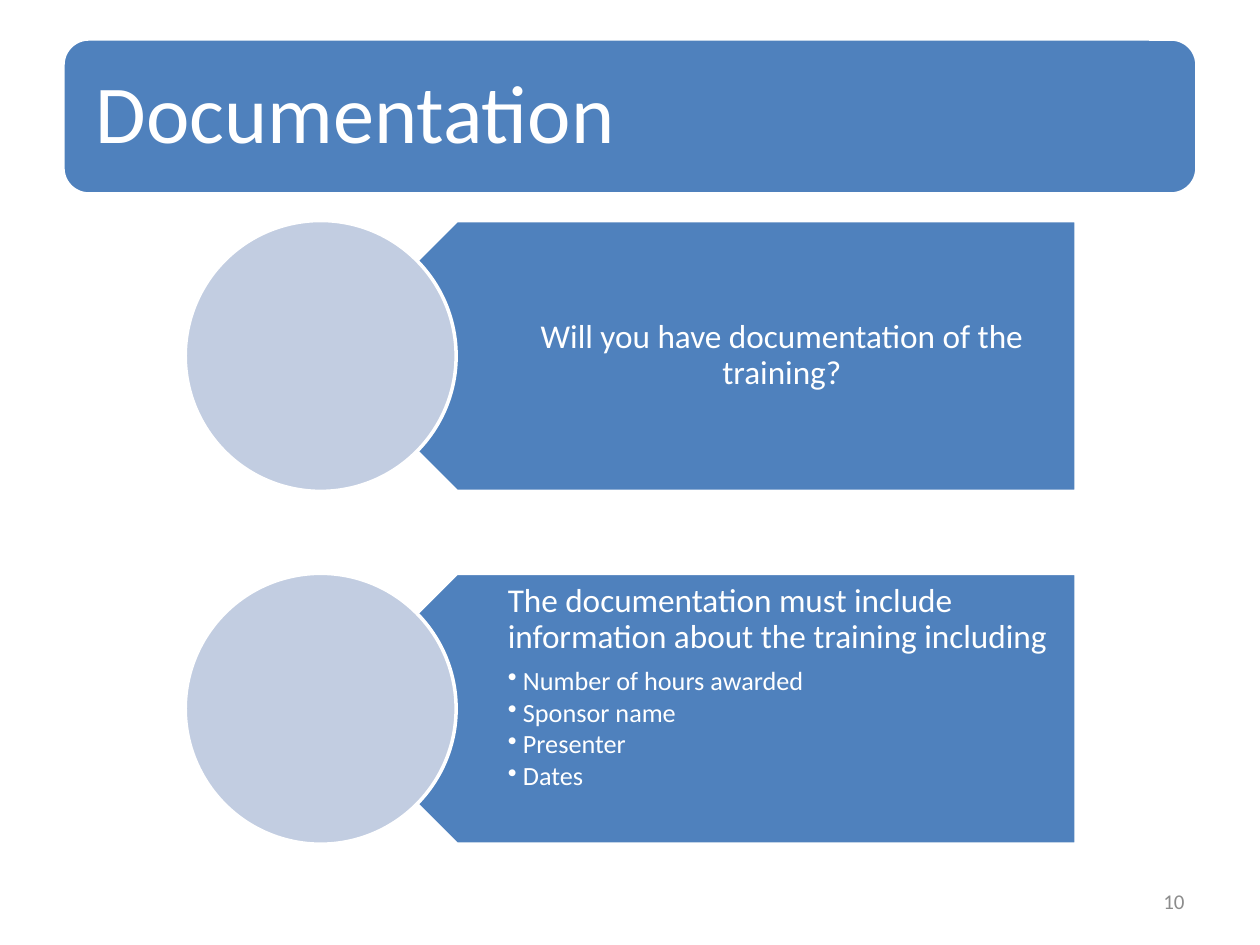
from dataclasses import dataclass

from lxml import etree
from pptx import Presentation
from pptx.dml.color import RGBColor
from pptx.enum import shapes, text
from pptx.oxml.ns import qn
from pptx.util import Inches, Pt

SHAPE = shapes.MSO_SHAPE
ALIGN = text.PP_ALIGN
ANCHOR = text.MSO_ANCHOR


@dataclass(frozen=True)
class Theme:
    font: str = "Calibri"
    accent: str = "4F81BD"
    pale: str = "C2CDE1"
    white: str = "FFFFFF"
    grey: str = "8C8C8C"
    title: int = 47
    body: int = 19
    bullet: int = 15
    number: int = 12
    outline: int = 2


@dataclass(frozen=True)
class Box:
    left: float
    top: float
    width: float
    height: float

    def emu(self) -> list[int]:
        return [Inches(v) for v in (self.left, self.top, self.width, self.height)]


@dataclass(frozen=True)
class Para:
    text: str
    size: int
    align: ALIGN = ALIGN.LEFT
    after: float = 0
    bullet: bool = False
    color: str = Theme.white
    spacing: float = 0.9


@dataclass(frozen=True)
class Topic:
    paras: list[Para]
    anchor: ANCHOR


THEME = Theme()
TOP, PITCH, SIZE = 1.75, 2.8, 2.15
INDENT = 0.12
BULLETS = ["Number of hours awarded", "Sponsor name", "Presenter", "Dates"]
TOPICS = [
    Topic([Para("Will you have documentation of the training?",
                THEME.body, ALIGN.CENTER)], ANCHOR.MIDDLE),
    Topic([Para("The documentation must include information about the training including",
                THEME.body, after=7)]
          + [Para(b, THEME.bullet, after=2, bullet=True) for b in BULLETS], ANCHOR.TOP),
]


def add_block(s, kind: SHAPE, box: Box, fill: str, rotation: float = 0):
    sp = s.shapes.add_shape(kind, *box.emu())
    sp.shadow.inherit = False
    sp.rotation = rotation
    sp.fill.solid()
    sp.fill.fore_color.rgb = RGBColor.from_string(fill)
    sp.line.color.rgb = RGBColor.from_string(THEME.white)
    sp.line.width = Pt(THEME.outline)
    return sp


def add_bullet(p) -> None:
    p.level = 1
    pPr = p._p.get_or_add_pPr()
    pPr.set("marL", str(Inches(INDENT)))
    pPr.set("indent", str(Inches(-INDENT)))
    etree.SubElement(pPr, qn("a:buChar")).set("char", "•")


def add_text(s, box: Box, paras: list[Para], anchor: ANCHOR,
             insets: tuple[float, float, float, float]) -> None:
    """Add a wrapped text box; insets run left, top, right, bottom."""
    tf = s.shapes.add_textbox(*box.emu()).text_frame
    left, top, right, bottom = map(Inches, insets)
    frame = {"word_wrap": True, "vertical_anchor": anchor, "margin_left": left,
             "margin_top": top, "margin_right": right, "margin_bottom": bottom}
    for name, value in frame.items():
        setattr(tf, name, value)
    for i, para in enumerate(paras):
        p = tf.paragraphs[0] if i == 0 else tf.add_paragraph()
        layout = {"alignment": para.align, "line_spacing": para.spacing,
                  "space_after": Pt(para.after)}
        for name, value in layout.items():
            setattr(p, name, value)
        if para.bullet:
            add_bullet(p)
        r = p.add_run()
        r.text = para.text
        for name, value in {"name": THEME.font, "size": Pt(para.size)}.items():
            setattr(r.font, name, value)
        r.font.color.rgb = RGBColor.from_string(para.color)


def add_topic(s, topic: Topic, top: float) -> None:
    """Draw a left-pointing panel with its text and overlapping circle."""
    add_block(s, SHAPE.PENTAGON, Box(2.55, top, 5.99, SIZE), THEME.accent, 180)
    add_text(s, Box(3.08, top, 5.45, SIZE), topic.paras, topic.anchor,
             (0.95, 0.08, 0.15, 0.08))
    add_block(s, SHAPE.OVAL, Box(1.47, top, SIZE, SIZE), THEME.pale)


def main() -> None:
    prs = Presentation()
    prs.slide_width, prs.slide_height = Inches(10), Inches(7.5)
    s = prs.slides.add_slide(prs.slide_layouts[6])

    add_block(s, SHAPE.ROUNDED_RECTANGLE, Box(0.5, 0.31, 9, 1.23), THEME.accent)
    add_text(s, Box(0.56, 0.37, 8.88, 1.11), [Para("Documentation", THEME.title)],
             ANCHOR.MIDDLE, (0.2, 0.2, 0.2, 0.2))
    for i, topic in enumerate(TOPICS):
        add_topic(s, topic, TOP + i * PITCH)
    number = Para("10", THEME.number, ALIGN.RIGHT, color=THEME.grey, spacing=1.0)
    add_text(s, Box(7.17, 6.95, 2.33, 0.4), [number], ANCHOR.MIDDLE,
             (0.1, 0.05, 0.1, 0.05))

    prs.save("out.pptx")


if __name__ == "__main__":
    main()
